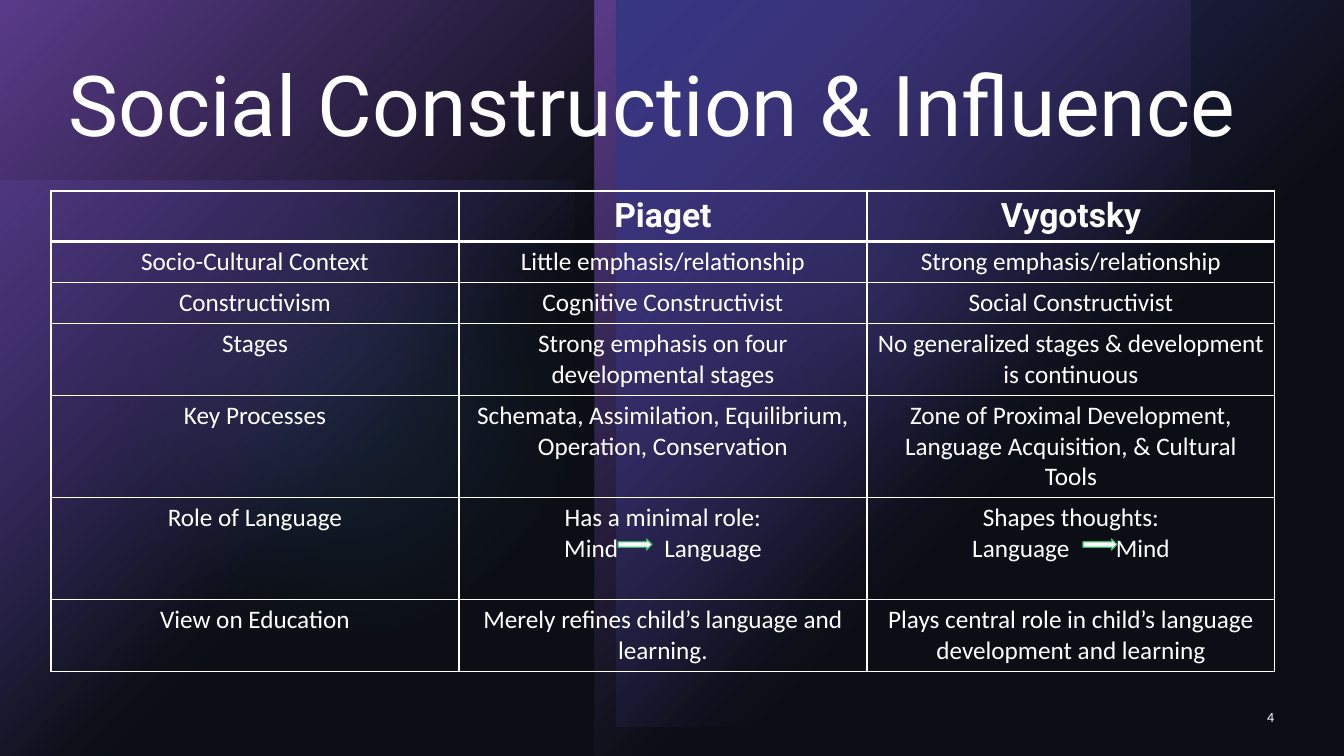
from lxml import etree
from pptx import Presentation
from pptx.dml.color import RGBColor
from pptx.enum.shapes import MSO_SHAPE
from pptx.enum.text import MSO_ANCHOR, PP_ALIGN
from pptx.oxml import parse_xml
from pptx.oxml.ns import qn
from pptx.util import Pt

RECT, OVAL, ARROW = MSO_SHAPE.RECTANGLE, MSO_SHAPE.OVAL, MSO_SHAPE.RIGHT_ARROW
LEFT, MID, RIGHT = PP_ALIGN.LEFT, PP_ALIGN.CENTER, PP_ALIGN.RIGHT
TOP, CENTER = MSO_ANCHOR.TOP, MSO_ANCHOR.MIDDLE
NS = "http://schemas.openxmlformats.org/drawingml/2006/main"
PX = 914400 / 100.8
WHITE, BLACK, GREEN = "FFFFFF", "000000", "39B368"
PURPLE, INDIGO, BLUE, NAVY = "844BC5", "4842B7", "4B78C5", "1C2432"

TITLE = "Social Construction & Influence"
GAP = ("\u0020", 29)
ROWS = [
    (49, ["", "Piaget", "Vygotsky"]),
    (41, ["Socio-Cultural Context", "Little emphasis/relationship",
          "Strong emphasis/relationship"]),
    (41, ["Constructivism", "Cognitive Constructivist", "Social Constructivist"]),
    (72, ["Stages", "Strong emphasis on four developmental stages",
          "No generalized stages & development is continuous"]),
    (102, ["Key Processes",
           "Schemata, Assimilation, Equilibrium, Operation, Conservation",
           "Zone of Proximal Development, Language Acquisition, & Cultural Tools"]),
    (102, ["Role of Language",
           ["Has a minimal role:", ("Mind", GAP, "Language")],
           ["Shapes thoughts:", ("Language", GAP, "Mind")]]),
    (72, ["View on Education", "Merely refines child’s language and learning.",
          "Plays central role in child’s language development and learning"]),
]
TABLE = (51, 191)
COLS = 408
GLOWS = [
    (RECT, (0, 181, 575, 575), INDIGO, 60, True),
    (OVAL, (634, 43, 476, 476), BLUE, 60, False),
    (OVAL, (0, 56, 700, 700), BLUE, 20, False),
    (RECT, (0, 0, 595, 756), PURPLE, 100, True),
    (RECT, (595, 0, 596, 756), PURPLE, 100, True),
    (RECT, (617, 0, 727, 727), INDIGO, 100, True),
    (RECT, (0, 0, 1344, 756), NAVY, 40, False),
]
ARROWS = [(618, 539, 34, 11), (1083, 539, 34, 11)]


def emu(*px):
    return [round(n * PX) for n in px]


def rgb(code):
    return RGBColor.from_string(code)


def tint(code, alpha):
    return f'<a:srgbClr val="{code}"><a:alpha val="{alpha * 1000}"/></a:srgbClr>'


def write(frame, text, size=18, font="Calibri", color=WHITE, bold=False,
          align=MID, anchor=TOP, lead=None):
    frame.word_wrap = True
    frame.vertical_anchor = anchor
    for i, line in enumerate(text if isinstance(text, list) else [text]):
        para = frame.paragraphs[0] if i == 0 else frame.add_paragraph()
        para.alignment = align
        if lead:
            para.line_spacing = lead
        for part in line if isinstance(line, tuple) else (line,):
            word, space = part if isinstance(part, tuple) else (part, 0)
            run = para.add_run()
            run.text = word
            run.font.size = Pt(size)
            run.font.name = font
            run.font.bold = bold
            run.font.color.rgb = rgb(color)
            if space:
                run.font._element.set("spc", str(space * 100))


def label(slide, box, text, **style):
    write(slide.shapes.add_textbox(*emu(*box)).text_frame, text, **style)


def draw(slide, kind, box, color, edge=None):
    shape = slide.shapes.add_shape(kind, *emu(*box))
    shape.shadow.inherit = False
    shape.fill.solid()
    shape.fill.fore_color.rgb = rgb(color)
    if edge:
        shape.line.color.rgb = rgb(edge)
        shape.line.width = Pt(1)
    else:
        shape.line.fill.background()
    return shape


def glow(slide, kind, box, color, alpha, fade):
    props = draw(slide, kind, box, color)._element.spPr
    if fade:
        xml = (f'<a:gradFill xmlns:a="{NS}" rotWithShape="1"><a:gsLst>'
               f'<a:gs pos="0">{tint(color, alpha)}</a:gs>'
               f'<a:gs pos="60000">{tint(color, 0)}</a:gs></a:gsLst>'
               '<a:path path="circle"><a:fillToRect r="100000" b="100000"/>'
               '</a:path></a:gradFill>')
    else:
        xml = f'<a:solidFill xmlns:a="{NS}">{tint(color, alpha)}</a:solidFill>'
    props.replace(props.find(qn("a:solidFill")), parse_xml(xml))
    if kind == OVAL:
        soft = etree.SubElement(props.find(qn("a:effectLst")), qn("a:softEdge"))
        soft.set("rad", "1270000")


def border(cell, head, under):
    props = cell._tc.get_or_add_tcPr()
    for side in "LRTB":
        thick = (head and side == "B") or (under and side == "T")
        width = Pt(3 if thick else 1)
        props.append(parse_xml(
            f'<a:ln{side} xmlns:a="{NS}" w="{width}"><a:solidFill>'
            f'{tint(WHITE, 100)}</a:solidFill></a:ln{side}>'))


def grid(slide):
    high = sum(row[0] for row in ROWS)
    box = emu(*TABLE, 3 * COLS, high)
    table = slide.shapes.add_table(len(ROWS), 3, *box).table
    table.first_row = table.horz_banding = False
    for col in table.columns:
        col.width = emu(COLS)[0]
    for r, (tall, texts) in enumerate(ROWS):
        table.rows[r].height = emu(tall)[0]
        head = r == 0
        style = dict(size=24, font="Roboto", bold=True) if head else {}
        for c, text in enumerate(texts):
            cell = table.cell(r, c)
            border(cell, head, r == 1)
            cell.fill.background()
            if text:
                write(cell.text_frame, text, **style)


def main():
    deck = Presentation()
    deck.slide_width, deck.slide_height = emu(1344, 756)
    slide = deck.slides.add_slide(deck.slide_layouts[6])
    slide.background.fill.solid()
    slide.background.fill.fore_color.rgb = rgb(BLACK)
    for item in GLOWS:
        glow(slide, *item)
    label(slide, (59, 59, 1224, 120), TITLE, size=60, font="Roboto",
          align=LEFT, lead=0.9)
    grid(slide)
    label(slide, (1200, 697, 84, 40), "4", size=10, align=RIGHT, anchor=CENTER)
    for box in ARROWS:
        draw(slide, ARROW, box, WHITE, GREEN)
    deck.save("out.pptx")


if __name__ == "__main__":
    main()
